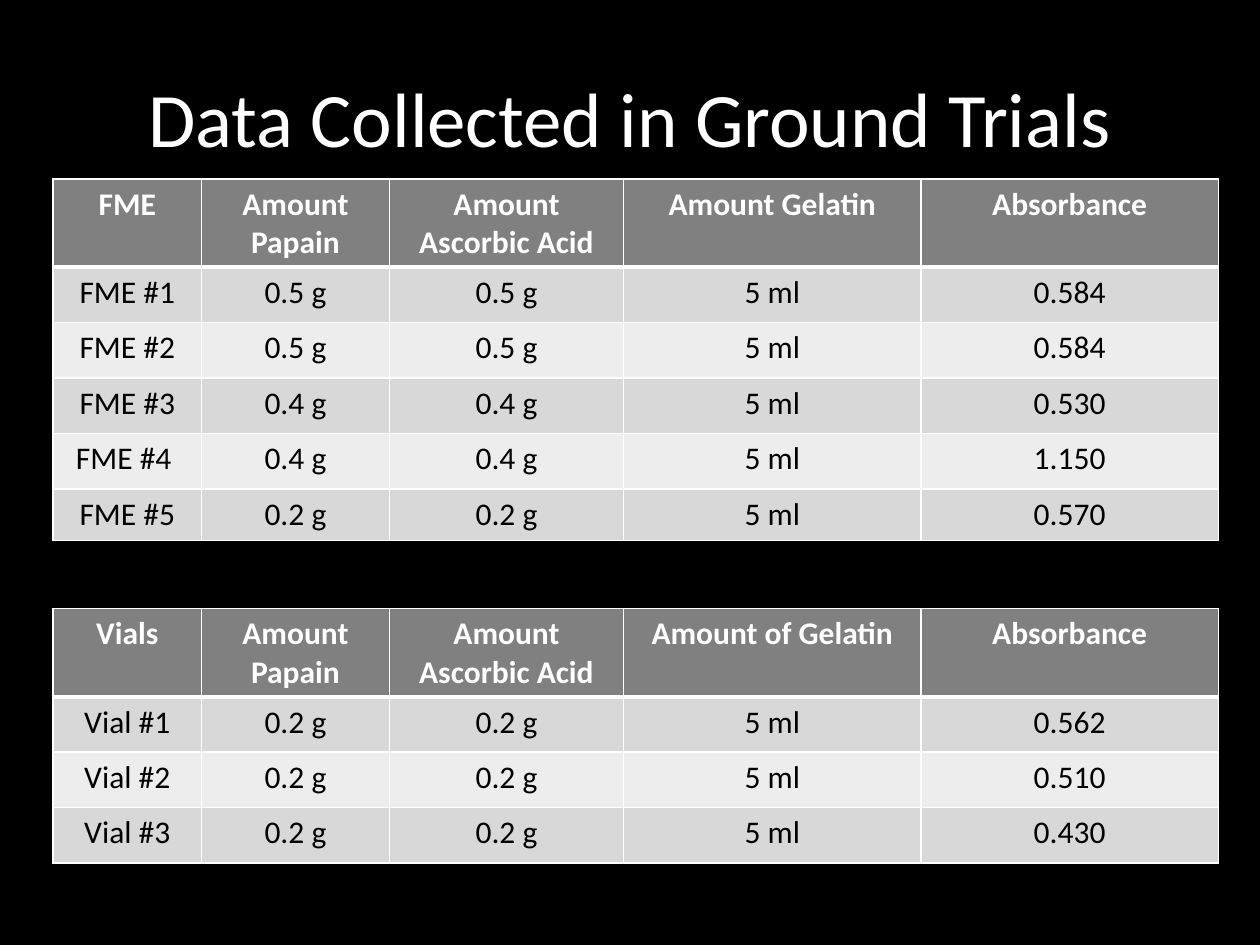
from dataclasses import dataclass

from lxml.etree import SubElement
from pptx import Presentation
from pptx.dml.color import RGBColor
from pptx.enum.text import MSO_ANCHOR, PP_ALIGN
from pptx.oxml.ns import qn
from pptx.util import Inches, Pt

FONT = "Calibri"
WHITE, BLACK, GRAY = "FFFFFF", "000000", "808080"
BANDS = ("D8D8D8", "EDEDED")
LEFT = 0.42
COLS = (1.18, 1.49, 1.86, 2.36, 2.36)
HEAD, ROW = 0.7, 0.44


@dataclass
class Trial:
    top: float
    head: tuple
    rows: list
    last: float = ROW


TRIALS = [
    Trial(1.42, ("FME", "Amount Papain", "Amount Ascorbic Acid", "Amount Gelatin", "Absorbance"), [
        ("FME #1", "0.5 g", "0.5 g", "5 ml", "0.584"),
        ("FME #2", "0.5 g", "0.5 g", "5 ml", "0.584"),
        ("FME #3", "0.4 g", "0.4 g", "5 ml", "0.530"),
        ("FME #4 ", "0.4 g", "0.4 g", "5 ml", "1.150"),
        ("FME #5", "0.2 g", "0.2 g", "5 ml", "0.570"),
    ], last=0.41),
    Trial(4.83, ("Vials", "Amount Papain", "Amount Ascorbic Acid", "Amount of Gelatin", "Absorbance"), [
        ("Vial #1", "0.2 g", "0.2 g", "5 ml", "0.562"),
        ("Vial #2", "0.2 g", "0.2 g", "5 ml", "0.510"),
        ("Vial #3", "0.2 g", "0.2 g", "5 ml", "0.430"),
    ]),
]


def color(code: str) -> RGBColor:
    return RGBColor.from_string(code)


def write(frame, text: str, size: int, code: str, bold: bool = False) -> None:
    frame.text = text
    para = frame.paragraphs[0]
    para.alignment = PP_ALIGN.CENTER
    font = para.runs[0].font
    font.name, font.size, font.bold = FONT, Pt(size), bold
    font.color.rgb = color(code)


def edge(cell, side: str, width: int) -> None:
    props = cell._tc.get_or_add_tcPr()
    line = SubElement(props, qn(f"a:ln{side}"), w=str(Pt(width)))
    fill = SubElement(line, qn("a:solidFill"))
    SubElement(fill, qn("a:srgbClr"), val=WHITE)


def draw_cell(cell, text: str, row: int) -> None:
    # Edges go before the fill in the cell properties
    thick = {0: "B", 1: "T"}.get(row)
    for side in "LRTB":
        edge(cell, side, 3 if side == thick else 1)
    cell.fill.solid()
    cell.fill.fore_color.rgb = color(BANDS[(row - 1) % 2] if row else GRAY)
    write(cell.text_frame, text, 18, BLACK if row else WHITE, bold=row == 0)


def draw_trial(slide, trial: Trial) -> None:
    data = [trial.head, *trial.rows]
    highs = [HEAD] + [ROW] * (len(trial.rows) - 1) + [trial.last]
    frame = slide.shapes.add_table(
        len(data), len(COLS), Inches(LEFT), Inches(trial.top),
        Inches(sum(COLS)), Inches(sum(highs)))
    table = frame.table
    for col, width in zip(table.columns, COLS):
        col.width = Inches(width)
    for row, high in zip(table.rows, highs):
        row.height = Inches(high)
    for r, texts in enumerate(data):
        for c, text in enumerate(texts):
            draw_cell(table.cell(r, c), text, r)


def main() -> None:
    deck = Presentation()
    deck.slide_width, deck.slide_height = Inches(10), Inches(7.5)
    slide = deck.slides.add_slide(deck.slide_layouts[6])
    slide.background.fill.solid()
    slide.background.fill.fore_color.rgb = color(BLACK)

    # Title
    box = slide.shapes.add_textbox(Inches(0.5), Inches(0.3), Inches(9), Inches(1.25))
    frame = box.text_frame
    frame.word_wrap = True
    frame.vertical_anchor = MSO_ANCHOR.MIDDLE
    write(frame, "Data Collected in Ground Trials", 44, WHITE)

    # Tables
    for trial in TRIALS:
        draw_trial(slide, trial)
    deck.save("out.pptx")


if __name__ == "__main__":
    main()
